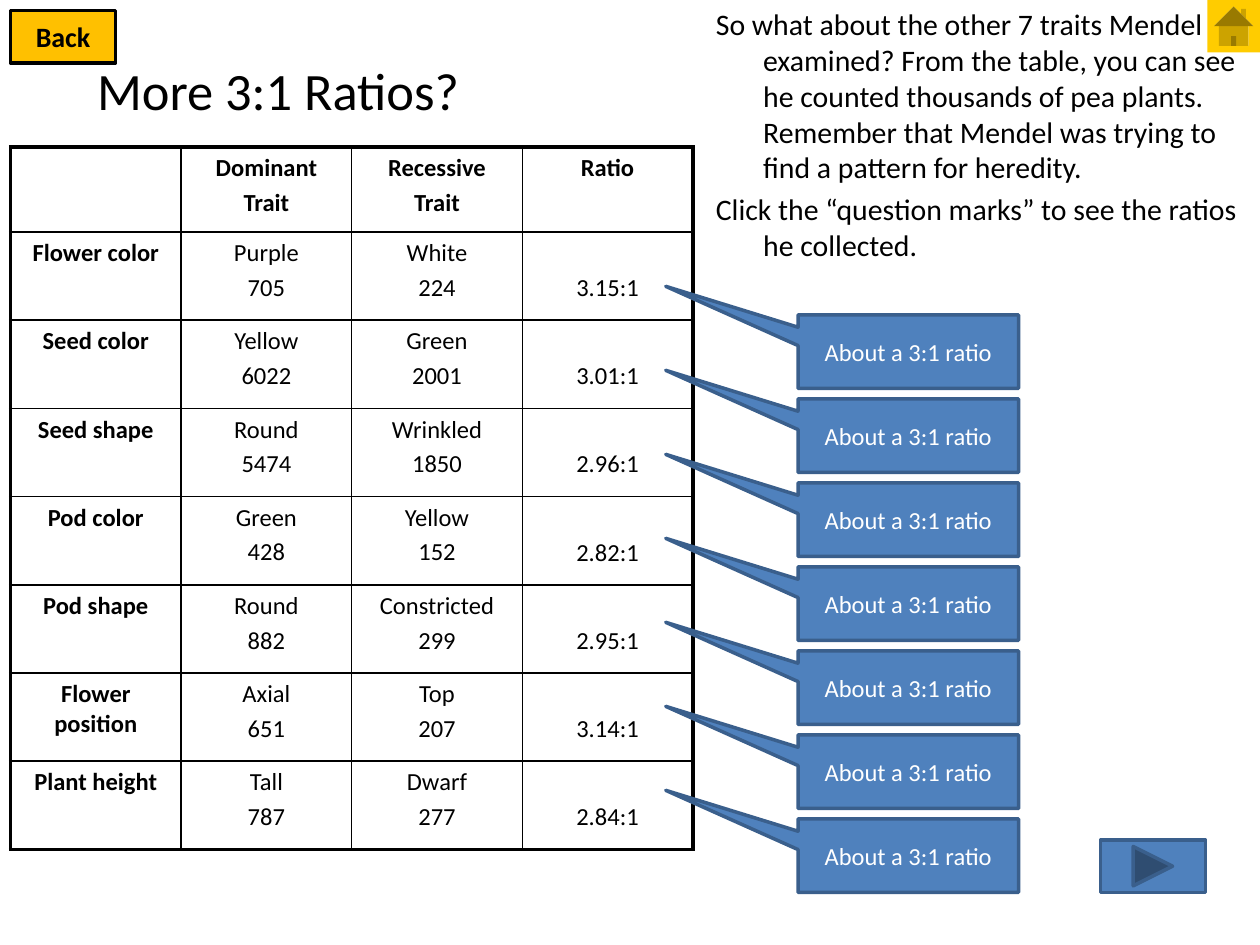
from dataclasses import dataclass

from lxml import etree
from pptx import Presentation
from pptx.dml.color import RGBColor
from pptx.enum import shapes, text
from pptx.oxml.ns import qn
from pptx.util import Emu, Inches, Pt

UNITS_WIDE, UNITS_HIGH = 120, 90
UNIT = Inches(10) // UNITS_WIDE
FONT = "Calibri"
BLACK, WHITE = "000000", "FFFFFF"
BLUE, NAVY = "4F81BD", "3A5F8C"
MSO = shapes.MSO_SHAPE
CENTER, LEFT = text.PP_ALIGN.CENTER, text.PP_ALIGN.LEFT
TOP, MIDDLE = text.MSO_ANCHOR.TOP, text.MSO_ANCHOR.MIDDLE


@dataclass(frozen=True)
class Box:
    col: float
    row: float
    cols: float
    rows: float

    def emu(self) -> list[Emu]:
        return [units(n) for n in (self.col, self.row, self.cols, self.rows)]


@dataclass(frozen=True)
class Style:
    size: float
    color: str = BLACK
    bold: bool = False
    align: int = CENTER


@dataclass(frozen=True)
class Button:
    kind: int
    box: Box
    fill: str
    line: str = ""
    label: str = ""
    style: Style = Style(14, WHITE)
    adjust: tuple[float, ...] = ()


@dataclass(frozen=True)
class Trait:
    name: str
    dominant: tuple[str, ...]
    recessive: tuple[str, ...]
    ratio: str


TRAITS = [
    Trait("Flower color", ("Purple", "705"), ("White", "224"), "3.15:1"),
    Trait("Seed color", ("Yellow", "6022"), ("Green", "2001"), "3.01:1"),
    Trait("Seed shape", ("Round", "5474"), ("Wrinkled", "1850"), "2.96:1"),
    Trait("Pod color", ("Green", "428"), ("Yellow", "152"), "2.82:1"),
    Trait("Pod shape", ("Round", "882"), ("Constricted", "299"), "2.95:1"),
    Trait("Flower position", ("Axial", "651"), ("Top", "207"), "3.14:1"),
    Trait("Plant height", ("Tall", "787"), ("Dwarf", "277"), "2.84:1"),
]
HEADINGS = [(), ("Dominant", "Trait"), ("Recessive", "Trait"), ("Ratio",)]
BODY = (
    "So what about the other 7 traits Mendel examined? From the table, you can see "
    "he counted thousands of pea plants. Remember that Mendel was trying to find a "
    "pattern for heredity.",
    "Click the “question marks” to see the ratios he collected.",
)


def units(n: float) -> Emu:
    return Emu(round(n * UNIT))


def rgb(color: str) -> RGBColor:
    return RGBColor.from_string(color)


def write(tf, lines: tuple[str, ...], style: Style, hanging: float = 0) -> None:
    tf.word_wrap = True
    for i, line in enumerate(lines):
        p = tf.add_paragraph() if i else tf.paragraphs[0]
        p.text = line
        p.alignment = style.align
        p.font.name, p.font.size = FONT, Pt(style.size)
        p.font.bold, p.font.color.rgb = style.bold, rgb(style.color)
        if i:
            p.space_before = Pt(style.size * 0.2)
        if hanging:
            pPr = p._p.get_or_add_pPr()
            pPr.set("marL", str(units(hanging)))
            pPr.set("indent", str(-units(hanging)))


def add_text(s, box: Box, lines: tuple[str, ...], style: Style,
             anchor: int = TOP, hanging: float = 0) -> None:
    tf = s.shapes.add_textbox(*box.emu()).text_frame
    tf.vertical_anchor = anchor
    write(tf, lines, style, hanging)


def add_button(s, button: Button) -> None:
    sp = s.shapes.add_shape(button.kind, *button.box.emu())
    sp.shadow.inherit = False
    for i, value in enumerate(button.adjust):
        sp.adjustments[i] = value
    sp.fill.solid()
    sp.fill.fore_color.rgb = rgb(button.fill)
    if button.line:
        sp.line.color.rgb = rgb(button.line)
        sp.line.width = Pt(2)
    else:
        sp.line.fill.background()
    if button.label:
        sp.text_frame.vertical_anchor = MIDDLE
        write(sp.text_frame, (button.label,), button.style)


def add_border(cell, side: str, width: float) -> None:
    tcPr = cell._tc.get_or_add_tcPr()
    ln = etree.SubElement(tcPr, qn(f"a:ln{side}"), w=str(Pt(width)))
    fill = etree.SubElement(ln, qn("a:solidFill"))
    etree.SubElement(fill, qn("a:srgbClr"), val=BLACK)


def add_trait_table(s, box: Box, header_rows: float, trait_rows: float) -> None:
    grid = [HEADINGS]
    grid += [[(t.name,), t.dominant, t.recessive, (t.ratio,)] for t in TRAITS]
    last_row, last_col = len(grid) - 1, len(HEADINGS) - 1
    table = s.shapes.add_table(len(grid), len(HEADINGS), *box.emu()).table
    table.first_row = table.horz_banding = False
    for column in table.columns:
        column.width = units(box.cols / len(HEADINGS))
    for r, lines_by_col in enumerate(grid):
        table.rows[r].height = units(trait_rows if r else header_rows)
        for c, lines in enumerate(lines_by_col):
            cell = table.cell(r, c)
            edges = {"L": c == 0, "R": c == last_col, "T": r == 0, "B": r == last_row}
            for side, outer in edges.items():
                add_border(cell, side, 2.25 if outer else 1)
            cell.fill.background()
            write(cell.text_frame, lines, Style(14, bold=r == 0 or c == 0))
            if r and c == last_col:
                cell.margin_top = Pt(23.6)


def main() -> None:
    prs = Presentation()
    prs.slide_width, prs.slide_height = units(UNITS_WIDE), units(UNITS_HIGH)
    s = prs.slides.add_slide(prs.slide_layouts[6])

    add_text(s, Box(0, 3, 53, 11), ("More 3:1 Ratios?",), Style(30), MIDDLE)
    add_text(s, Box(67, 0, 53, 49), BODY, Style(17, align=LEFT), hanging=4.5)
    add_trait_table(s, Box(1, 14, 65, 67), header_rows=8.1, trait_rows=8.4)

    buttons = [Button(MSO.ACTION_BUTTON_HOME, Box(115, 0, 5, 5), "FFCC00")]
    buttons += [
        Button(MSO.RECTANGULAR_CALLOUT, Box(76, 30 + 8 * i, 21, 7), BLUE, NAVY,
               "About a 3:1 ratio", adjust=(-1.1, -0.89))
        for i in range(len(TRAITS))
    ]
    buttons += [
        Button(MSO.ACTION_BUTTON_FORWARD_OR_NEXT, Box(104.8, 80, 10, 5), BLUE, NAVY),
        Button(MSO.RECTANGLE, Box(1, 1, 10, 5), "FFC000", BLACK, "Back",
               Style(16, bold=True)),
    ]
    for button in buttons:
        add_button(s, button)

    prs.save("out.pptx")


if __name__ == "__main__":
    main()
